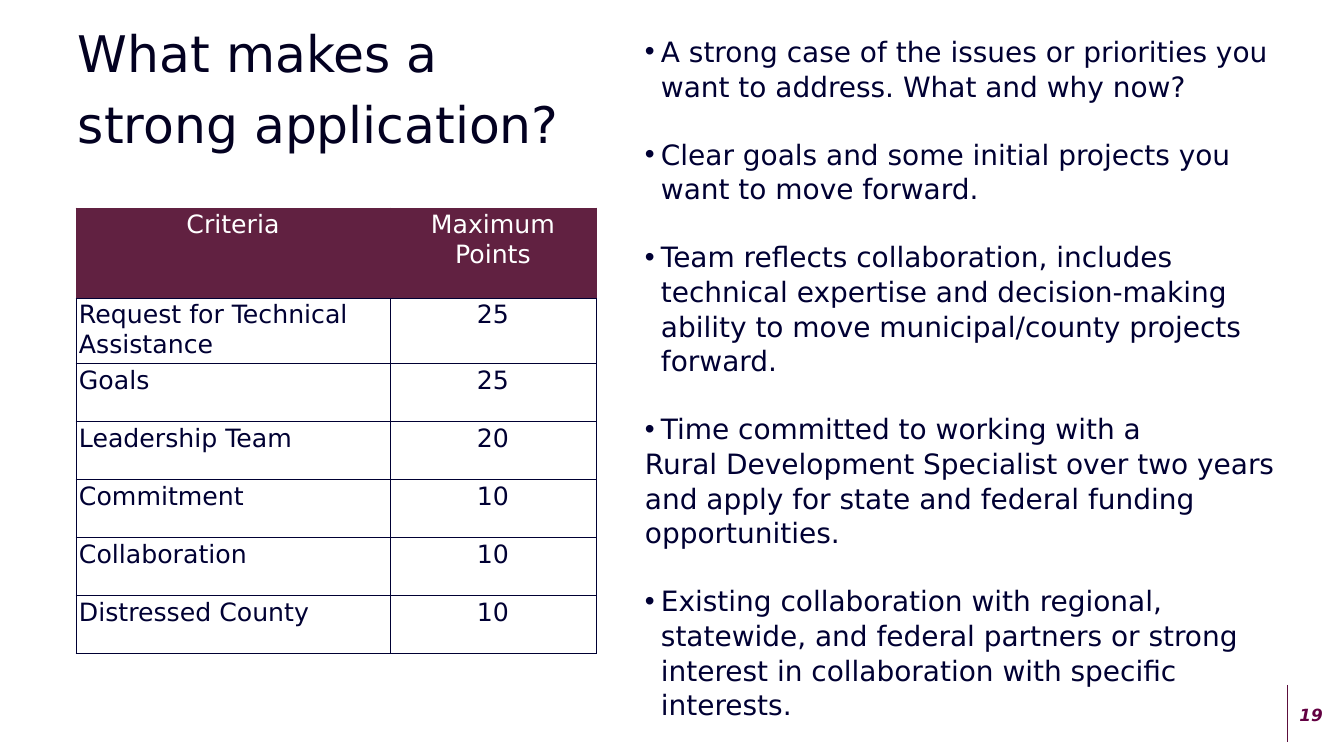
from lxml import etree
from pptx import Presentation
from pptx.dml.color import RGBColor
from pptx.enum.shapes import MSO_CONNECTOR
from pptx.enum.text import MSO_ANCHOR, PP_ALIGN
from pptx.oxml.ns import qn
from pptx.util import Pt

CENTER, LEFT = PP_ALIGN.CENTER, PP_ALIGN.LEFT
TOP, MIDDLE = MSO_ANCHOR.TOP, MSO_ANCHOR.MIDDLE
STRAIGHT = MSO_CONNECTOR.STRAIGHT

FONT = "DejaVu Sans"
NAVY, INK, WINE, PLUM, RULE, WHITE = (
    "000033", "030121", "612141", "630042", "5C0E3D", "FFFFFF")

TITLE = ["What makes a", "strong application?"]
CRITERIA = [
    ("Criteria", "Maximum Points"),
    ("Request for Technical Assistance", "25"),
    ("Goals", "25"),
    ("Leadership Team", "20"),
    ("Commitment", "10"),
    ("Collaboration", "10"),
    ("Distressed County", "10"),
]
# Each point is a bulleted line, then any lines that follow without a bullet.
POINTS = [
    ["A strong case of the issues or priorities you want to address. "
     "What and why now?"],
    ["Clear goals and some initial projects you want to move forward."],
    ["Team reflects collaboration, includes technical expertise and "
     "decision-making ability to move municipal/county projects forward."],
    ["Time committed to working with a",
     "Rural Development Specialist over two years",
     "and apply for state and federal funding",
     "opportunities."],
    ["Existing collaboration with regional, statewide, and federal partners "
     "or strong interest in collaboration with specific interests."],
]
PAGE_NUMBER = "19"

TITLE_FORMAT = {"size": Pt(72), "color": INK}
POINT_FORMAT = {"size": Pt(40), "color": NAVY}
CELL_FORMAT = {"size": Pt(36), "color": NAVY}
HEADER_FORMAT = {"size": Pt(36), "color": WHITE}
NUMBER_FORMAT = {"size": Pt(24), "color": PLUM, "bold": True, "italic": True}

SLIDE_SIZE = (1344, 756)
TITLE_BOX = (73, 18, 572, 156)
POINTS_BOX = (640, 31, 673, 836)
NUMBER_BOX = (1287, 695, 48, 40)
NUMBER_RULE = (1287, 685, 1287, 742)
TABLE_AT = (76, 208)
COLUMNS = [314, 206]
ROWS = [90, 61] + [58] * 5
CELL_MARGIN = 3
BULLET_INDENT = 16
LINE_SPACING = 1.03
POINT_GAP = Pt(48)


def px(length):
    return round(length * 914400 / 50.4)


def rgb(color):
    return RGBColor.from_string(color)


def set_font(paragraph, values):
    paragraph.font.name = FONT
    for key, value in values.items():
        if key == "color":
            paragraph.font.color.rgb = rgb(value)
        else:
            setattr(paragraph.font, key, value)


def add_bullet(paragraph):
    properties = paragraph._p.get_or_add_pPr()
    properties.set("marL", str(px(BULLET_INDENT)))
    properties.set("indent", str(-px(BULLET_INDENT)))
    etree.SubElement(properties, qn("a:buFont"), typeface="Arial")
    etree.SubElement(properties, qn("a:buChar"), char="•")


def add_text(slide, box, lines, values, anchor=TOP):
    """Add a text box with one paragraph per line and return the paragraphs."""
    frame = slide.shapes.add_textbox(*map(px, box)).text_frame
    frame.word_wrap = True
    frame.vertical_anchor = anchor
    frame.text = "\n".join(lines)
    for paragraph in frame.paragraphs:
        set_font(paragraph, values)
    return frame.paragraphs


def add_title(slide):
    for paragraph in add_text(slide, TITLE_BOX, TITLE, TITLE_FORMAT):
        paragraph.line_spacing = LINE_SPACING
        paragraph.space_after = Pt(12)


def add_points(slide):
    lines = [line for point in POINTS for line in point]
    paragraphs = iter(add_text(slide, POINTS_BOX, lines, {}))
    for point in POINTS:
        for line in point:
            paragraph = next(paragraphs)
            if line is point[0]:
                add_bullet(paragraph)
            paragraph.line_spacing = LINE_SPACING
            paragraph.space_after = POINT_GAP if line is point[-1] else Pt(0)
            set_font(paragraph, POINT_FORMAT)


def set_borders(cell, colors):
    """Draw each side (L, R, T, B) as a one-point line of its colour."""
    properties = cell._tc.get_or_add_tcPr()
    for place, (side, color) in enumerate(colors.items()):
        line = etree.Element(qn(f"a:ln{side}"), w=str(Pt(1)))
        fill = etree.SubElement(line, qn("a:solidFill"))
        etree.SubElement(fill, qn("a:srgbClr"), val=color)
        properties.insert(place, line)


def add_criteria(slide):
    table = slide.shapes.add_table(
        len(ROWS), len(COLUMNS), *map(px, TABLE_AT),
        px(sum(COLUMNS)), px(sum(ROWS))).table
    for column, width in zip(table.columns, COLUMNS):
        column.width = px(width)
    for row, height in zip(table.rows, ROWS):
        row.height = px(height)
    for r, texts in enumerate(CRITERIA):
        header = r == 0
        edge = WINE if header else NAVY
        for c, text in enumerate(texts):
            cell = table.cell(r, c)
            cell.text = text
            cell.margin_left = cell.margin_right = px(CELL_MARGIN)
            cell.fill.solid()
            cell.fill.fore_color.rgb = rgb(WINE if header else WHITE)
            set_borders(cell, {"L": edge, "R": edge, "T": edge if header else NAVY,
                               "B": NAVY})
            paragraph = cell.text_frame.paragraphs[0]
            paragraph.alignment = CENTER if header or c == 1 else LEFT
            set_font(paragraph, HEADER_FORMAT if header else CELL_FORMAT)


def add_page_number(slide):
    rule = slide.shapes.add_connector(STRAIGHT, *map(px, NUMBER_RULE))
    rule.line.color.rgb = rgb(RULE)
    rule.line.width = Pt(1)
    etree.SubElement(rule._element.spPr, qn("a:effectLst"))
    number, = add_text(slide, NUMBER_BOX, [PAGE_NUMBER], NUMBER_FORMAT, MIDDLE)
    number.alignment = CENTER


def main():
    deck = Presentation()
    deck.slide_width, deck.slide_height = map(px, SLIDE_SIZE)
    slide = deck.slides.add_slide(deck.slide_layouts[6])
    slide.background.fill.solid()
    slide.background.fill.fore_color.rgb = rgb(WHITE)
    add_page_number(slide)
    add_title(slide)
    add_criteria(slide)
    add_points(slide)
    deck.save("out.pptx")


if __name__ == "__main__":
    main()
